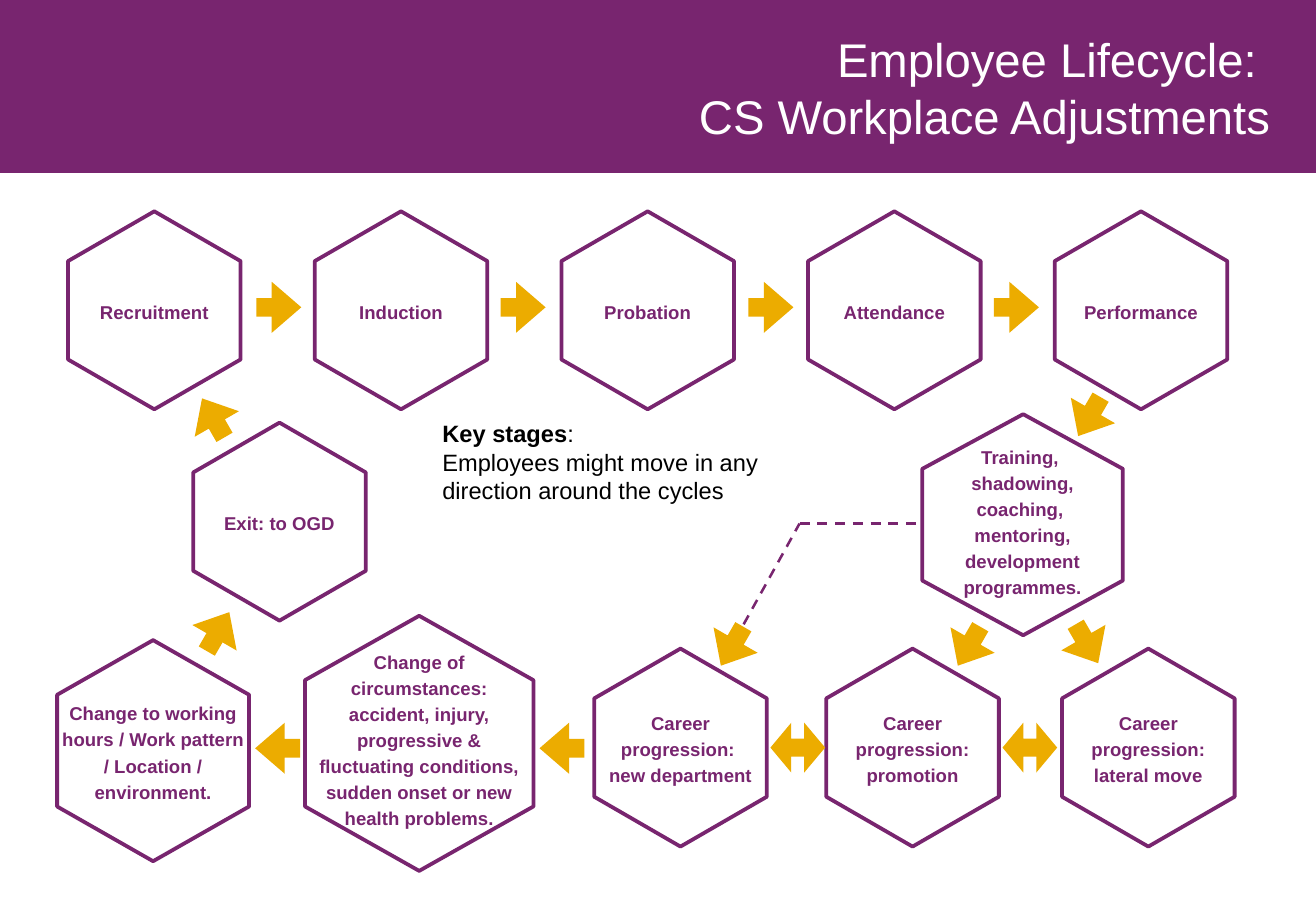
from lxml.etree import SubElement
from pptx import Presentation
from pptx.dml.color import RGBColor
from pptx.enum.dml import MSO_LINE
from pptx.enum.shapes import MSO_CONNECTOR, MSO_SHAPE
from pptx.enum.text import MSO_ANCHOR, MSO_AUTO_SIZE, PP_ALIGN
from pptx.oxml.ns import qn
from pptx.util import Pt

EMU_PER_PX = 9144  # 100 px to the inch
COLOURS = {"purple": "78256F", "amber": "ECAC00", "white": "FFFFFF", "black": "000000"}


def colour(name):
    return RGBColor.from_string(COLOURS[name])


def px(*lengths):
    return [length * EMU_PER_PX for length in lengths]


class LifecycleSlide:
    font_name = "Arial"

    def __init__(self, presentation):
        self.slide = presentation.slides.add_slide(presentation.slide_layouts[1])
        self.shapes = self.slide.shapes

    def format_paragraph(self, paragraph, size, colour_name, bold=False):
        for run in paragraph.runs:
            run.font.name = self.font_name
            run.font.size = Pt(size)
            run.font.bold = bold
            run.font.color.rgb = colour(colour_name)
        for line_break in paragraph._p.findall(qn("a:br")):
            SubElement(line_break, qn("a:rPr"), sz=str(size * 100))

    def prepare_frame(self, frame, anchor, margins=(0, 0, 0, 0)):
        frame.word_wrap = True
        frame.auto_size = MSO_AUTO_SIZE.NONE
        frame.vertical_anchor = anchor
        (frame.margin_left, frame.margin_top,
         frame.margin_right, frame.margin_bottom) = px(*margins)

    def place(self, shape, left, top, width, height):
        shape.left, shape.top, shape.width, shape.height = px(left, top, width, height)

    def banner(self, width, height):
        """Draw the title band behind the placeholders."""
        band = self.shapes.add_shape(MSO_SHAPE.RECTANGLE, *px(0, 0, width, height))
        band.shadow.inherit = False
        band.fill.solid()
        band.fill.fore_color.rgb = colour("purple")
        band.line.color.rgb = colour("purple")
        band.line.width = Pt(0.75)
        self.shapes._spTree.insert(2, band._element)

    def title(self, text, *box):
        title = self.shapes.title
        self.place(title, *box)
        self.prepare_frame(title.text_frame, MSO_ANCHOR.MIDDLE)
        title.text_frame.text = text
        paragraph = title.text_frame.paragraphs[0]
        paragraph.alignment = PP_ALIGN.RIGHT
        self.format_paragraph(paragraph, 28, "white")

    def body(self, heading, text, *box):
        """Fill the body placeholder with a bold heading and plain text below it."""
        body = self.slide.placeholders[1]
        self.place(body, *box)
        self.prepare_frame(body.text_frame, MSO_ANCHOR.TOP)
        paragraph = body.text_frame.paragraphs[0]
        paragraph.text = f"{heading}\v{text}"
        # The colon belongs to the heading line but is not bold.
        heading_run, text_run = paragraph.runs
        heading_run.text = heading.rstrip(":")
        colon_run = paragraph.add_run()
        colon_run.text = ":"
        heading_run._r.addnext(colon_run._r)
        properties = paragraph._p.get_or_add_pPr()
        properties.set("marL", str(25 * EMU_PER_PX))
        properties.set("indent", "0")
        SubElement(properties, qn("a:buNone"))
        paragraph.space_before = Pt(0)
        self.format_paragraph(paragraph, 14, "black")
        heading_run.font.bold = True

    def hexagon(self, text, left, top, width=142, height=163, margins=(4, 4, 4, 4)):
        middle, right = left + width / 2, left + width
        upper, lower = top + height / 4, top + height * 3 / 4
        builder = self.shapes.build_freeform(middle, top, scale=EMU_PER_PX)
        builder.add_line_segments([(left, upper), (left, lower), (middle, top + height),
                                   (right, lower), (right, upper)], close=True)
        shape = builder.convert_to_shape()
        shape.shadow.inherit = False
        shape.fill.solid()
        shape.fill.fore_color.rgb = colour("white")
        shape.line.color.rgb = colour("purple")
        shape.line.width = Pt(2.25)
        SubElement(shape.line._get_or_add_ln(), qn("a:round"))
        self.prepare_frame(shape.text_frame, MSO_ANCHOR.MIDDLE, margins)
        shape.text_frame.text = text
        paragraph = shape.text_frame.paragraphs[0]
        paragraph.alignment = PP_ALIGN.CENTER
        paragraph.line_spacing = 1.17
        self.format_paragraph(paragraph, 11, "purple", bold=True)

    def block_arrow(self, kind, box, adjustments, rotation=0):
        shape = self.shapes.add_shape(kind, *px(*box))
        shape.shadow.inherit = False
        shape.rotation = rotation
        for index, value in enumerate(adjustments):
            shape.adjustments[index] = value
        shape.fill.solid()
        shape.fill.fore_color.rgb = colour("amber")
        shape.line.fill.background()

    def arrow(self, left, top, rotation=0):
        self.block_arrow(MSO_SHAPE.RIGHT_ARROW, (left, top, 37, 42), (0.363, 0.657), rotation)

    def double_arrow(self, left, top):
        self.block_arrow(MSO_SHAPE.LEFT_RIGHT_ARROW, (left, top, 45, 41), (0.362, 0.418))

    def dashed_line(self, start, end):
        line = self.shapes.add_connector(MSO_CONNECTOR.STRAIGHT, *px(*start, *end))
        line.line.color.rgb = colour("purple")
        line.line.width = Pt(1.5)
        line.line.dash_style = MSO_LINE.DASH
        SubElement(line._element.spPr, qn("a:effectLst"))


def main():
    presentation = Presentation()
    presentation.slide_width, presentation.slide_height = px(1083, 750)
    slide = LifecycleSlide(presentation)

    slide.banner(1083, 142)
    slide.title("Employee Lifecycle: \vCS Workplace Adjustments", 38, 28, 1007, 88)
    slide.body("Key stages:", "Employees might move in any direction around the cycles",
               339, 345, 316, 163)

    first_stages = ["Recruitment", "Induction", "Probation", "Attendance", "Performance"]
    for index, stage in enumerate(first_stages):
        slide.hexagon(stage, 56 + 203 * index, 174)

    low_margins = (4, 0, 4, 8)
    slide.hexagon("Training, \vshadowing, coaching, \vmentoring, development programmes.",
                  759, 341, 165, 182, low_margins)
    for left, step in [(874, "Career progression: lateral move"),
                       (680, "Career progression: promotion"),
                       (489, "Career progression: \vnew department")]:
        slide.hexagon(step, left, 534)
    slide.hexagon("Change of circumstances: accident, injury, progressive & fluctuating "
                  "conditions, sudden onset or new health problems.",
                  251, 507, 188, 210, low_margins)
    slide.hexagon("Change to working hours / Work pattern / Location / environment.",
                  47, 527, 158, 182)
    slide.hexagon("Exit: to OGD", 159, 348)

    bend = (658, 431)
    slide.dashed_line((612, 514), bend)
    slide.dashed_line(bend, (759, 431))

    for left in (211, 412, 616, 818):
        slide.arrow(left, 232)
    for left in (444, 210):
        slide.arrow(left, 595, 180)
    for left, top, rotation in [(878, 322, 120), (779, 511, 120), (584, 511, 120),
                                (876, 509, 60), (161, 499, 300), (157, 323, 240)]:
        slide.arrow(left, top, rotation)
    for left in (825, 634):
        slide.double_arrow(left, 595)

    presentation.save("out.pptx")


if __name__ == "__main__":
    main()
